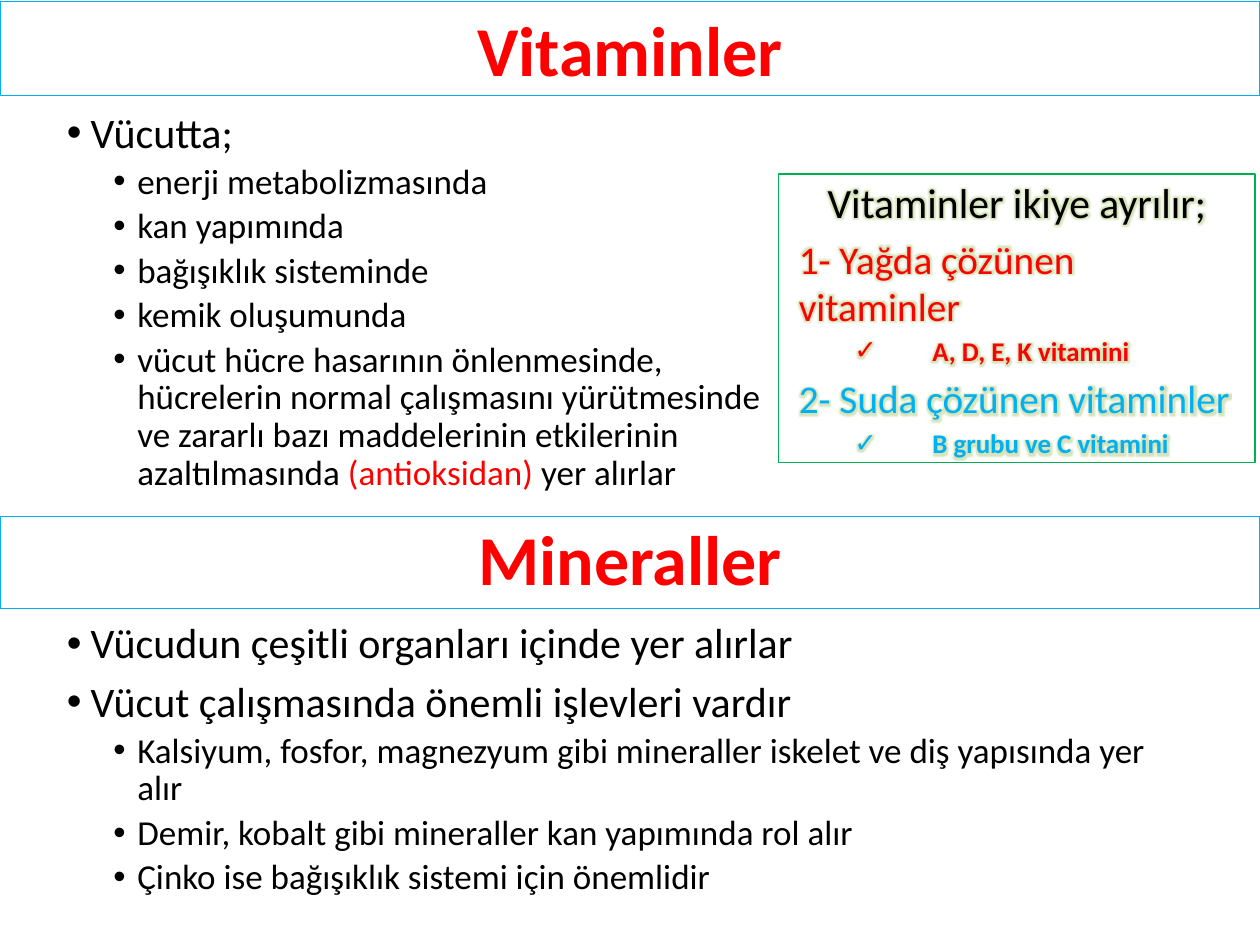
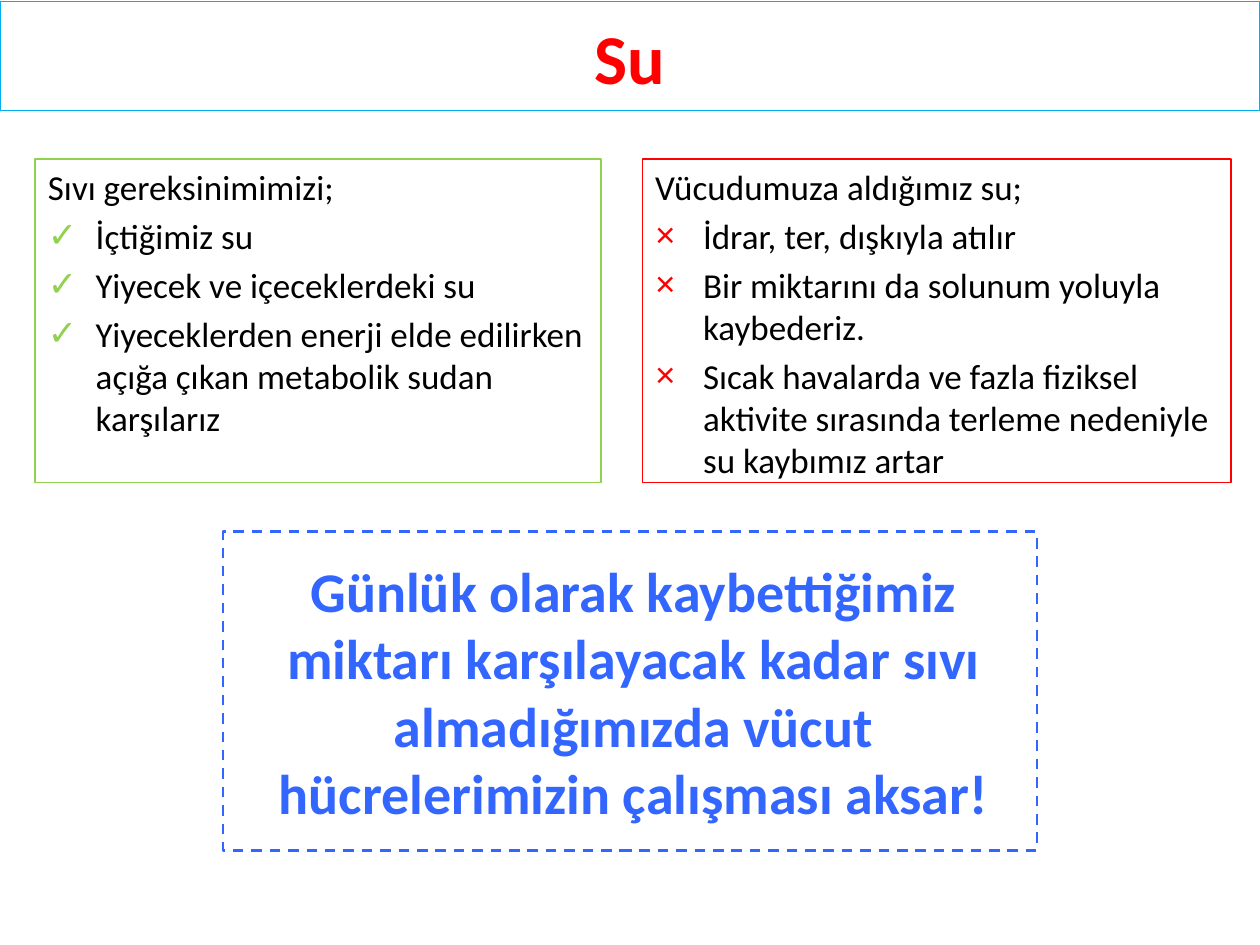
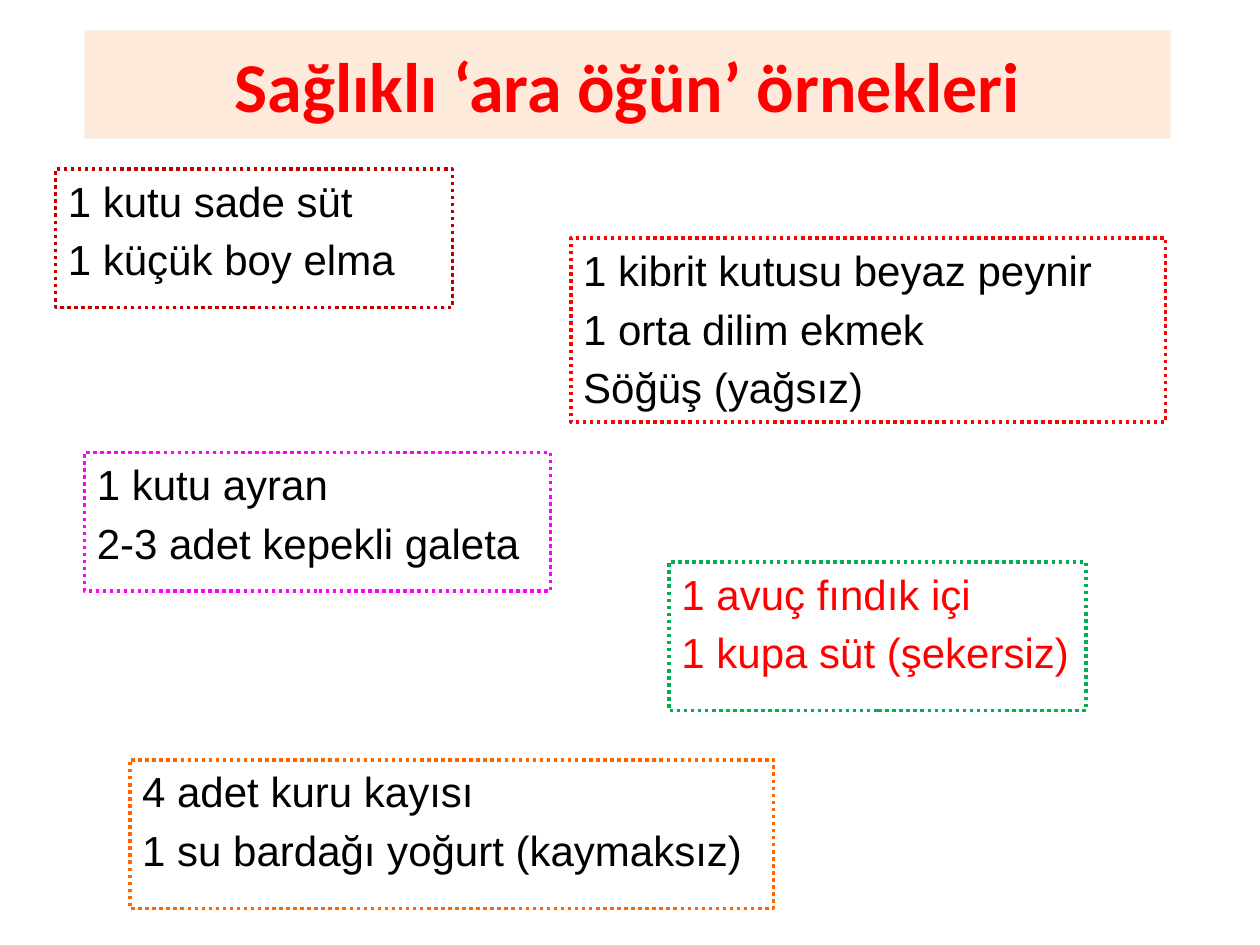
import dataclasses
import pptx
import pptx.dml.color
import pptx.enum.dml
import pptx.enum.shapes
import pptx.enum.text
import pptx.oxml
import pptx.oxml.ns
import pptx.util

ALIGN = pptx.enum.text.PP_ALIGN
ANCHOR = pptx.enum.text.MSO_ANCHOR
DASH = pptx.enum.dml.MSO_LINE
RECT = pptx.enum.shapes.MSO_SHAPE.RECTANGLE
NS = pptx.oxml.ns.nsdecls("a")


# Theme: colours, fonts and type sizes
class Theme:
    red, black, blue = "FF0000", "000000", "3366FF"
    sky, green, lime = "00B0F0", "00B050", "92D050"
    pink, orange, wine = "FF00FF", "FF6600", "C00000"
    peach, glow = "FDEADA", "9BBB59"
    font, plain = "Calibri", "Arial"
    head, call, large, mid = 40, 32, 24, 20


# Paragraph style; before is in points, or a percentage given as text
@dataclasses.dataclass
class Style:
    size: float
    color: str = Theme.black
    bold: bool = False
    font: str = Theme.font
    left: float = 0
    hang: float = 0
    level: int = 0
    line: float = 1
    before: object = "20%"
    mark: str = ""
    tint: str = ""
    center: bool = False
    glow: bool = False


HEAD = Style(Theme.head, Theme.red, True, before=0, center=True)
SUBHEAD = dataclasses.replace(HEAD, line=0.9)
CALL = Style(Theme.call, Theme.blue, True, left=0.06, center=True)
POINT = Style(Theme.large, left=0.19, hang=-0.19, line=0.9, before=7.5, mark="•")
SUB = dataclasses.replace(POINT, size=Theme.mid, left=0.56, level=1, before=3.8)
LEAD = Style(Theme.mid)
SNACK = Style(Theme.large, font=Theme.plain, left=0.38, hang=-0.38)

# Grid of the slide: 100 columns by 75 rows
COLS, ROWS = 100, 75


def place(deck, box):
    cell = deck.slide_width / COLS, deck.slide_height / ROWS
    return [round(n * cell[i % 2]) for i, n in enumerate(box)]


def rgb(code):
    return pptx.dml.color.RGBColor.from_string(code)


def node(text):
    return pptx.oxml.parse_xml(text)


def add_mark(props, style):
    if not style.mark:
        props.append(node(f"<a:buNone {NS}/>"))
        return
    if style.tint:
        props.append(node(f'<a:buClr {NS}><a:srgbClr val="{style.tint}"/></a:buClr>'))
    props.append(node(f'<a:buFont {NS} typeface="{Theme.plain}"/>'))
    props.append(node(f'<a:buChar {NS} char="{style.mark}"/>'))


def add_run(para, text, style, color):
    run = para.add_run()
    run.text = text
    font = run.font
    font.size, font.bold, font.name = pptx.util.Pt(style.size), style.bold, style.font
    font.color.rgb = rgb(color)
    if style.glow:
        fill = run._r.rPr.find(pptx.oxml.ns.qn("a:solidFill"))
        fill.addnext(node(
            f'<a:effectLst {NS}><a:glow rad="63500"><a:srgbClr val="{Theme.glow}">'
            f'<a:alpha val="40000"/></a:srgbClr></a:glow></a:effectLst>'))


def add_para(para, style, runs, first):
    para.level = style.level
    para.alignment = ALIGN.CENTER if style.center else ALIGN.LEFT
    para.line_spacing = style.line
    share = isinstance(style.before, str)
    para.space_before = pptx.util.Pt(0 if first or share else style.before)
    props = para._p.get_or_add_pPr()
    if share and not first:
        gap = props.find(pptx.oxml.ns.qn("a:spcBef"))
        gap.remove(gap[0])
        gap.append(node(f'<a:spcPct {NS} val="{int(style.before[:-1]) * 1000}"/>'))
    props.set("marL", str(pptx.util.Inches(style.left)))
    props.set("indent", str(pptx.util.Inches(style.hang)))
    add_mark(props, style)
    for run in runs:
        text, color = (run, style.color) if isinstance(run, str) else run
        add_run(para, text, style, color)


# One text region: lines are (style, run, run, ...)
def fill_box(deck, shape, box, lines, edge=None, fill=None, mid=False):
    shape.left, shape.top, shape.width, shape.height = place(deck, box)
    if fill:
        shape.fill.solid()
        shape.fill.fore_color.rgb = rgb(fill)
    else:
        shape.fill.background()
    if edge:
        color, width, *dash = edge
        shape.line.color.rgb = rgb(color)
        shape.line.width = pptx.util.Pt(width)
        if dash:
            shape.line.dash_style = dash[0]
    else:
        shape.line.fill.background()
    frame = shape.text_frame
    frame.word_wrap = True
    frame.auto_size = pptx.enum.text.MSO_AUTO_SIZE.NONE
    frame.vertical_anchor = ANCHOR.MIDDLE if mid else ANCHOR.TOP
    for i, (style, *runs) in enumerate(lines):
        para = frame.add_paragraph() if i else frame.paragraphs[0]
        add_para(para, style, runs, first=not i)


def add_box(deck, slide, box, lines, **look):
    shape = slide.shapes.add_shape(RECT, *place(deck, box))
    shape.shadow.inherit = False
    fill_box(deck, shape, box, lines, **look)


def add_band(deck, slide, text, high):
    fill_box(deck, slide.shapes.title, (0, 0.1, COLS, high), [(HEAD, text)],
             edge=(Theme.sky, 0.75), mid=True)


def new_slide(deck, name):
    return deck.slides.add_slide(deck.slide_layouts.get_by_name(name))


# Slide 1: vitamins above, minerals below
def add_kinds(deck, shape, box):
    top = Style(23.8, center=True, glow=True)
    kind = Style(22.4, Theme.red, left=0.06, glow=True)
    item = Style(15.4, Theme.red, True, left=1.12, hang=-0.62, level=1,
                 mark="✓", glow=True)
    water = {"color": Theme.sky}
    fill_box(deck, shape, box, [
        (top, "Vitaminler ikiye ayrılır;"),
        (kind, "1- Yağda çözünen vitaminler"),
        (item, "A, D, E, K vitamini"),
        (dataclasses.replace(kind, **water), "2- Suda çözünen vitaminler"),
        (dataclasses.replace(item, **water), "B grubu ve C vitamini"),
    ], edge=(Theme.green, 0.75), mid=True)


def vitamin_slide(deck):
    slide = new_slide(deck, "Comparison")
    _, kinds, uses, roles, spare = slide.placeholders
    spare._element.getparent().remove(spare._element)
    add_band(deck, slide, "Vitaminler", 7.5)
    fill_box(deck, uses, (4.3, 8.4, 57.5, 41.7), [
        (POINT, "Vücutta;"),
        (SUB, "enerji metabolizmasında"),
        (SUB, "kan yapımında"),
        (SUB, "bağışıklık sisteminde"),
        (SUB, "kemik oluşumunda"),
        (SUB, "vücut hücre hasarının önlenmesinde, hücrelerin normal çalışmasını "
              "yürütmesinde ve zararlı bazı maddelerinin etkilerinin azaltılmasında ",
         ("(antioksidan) ", Theme.red), "yer alırlar"),
    ])
    add_kinds(deck, kinds, (61.8, 13.8, 37.8, 22.9))
    add_box(deck, slide, (0, 41, COLS, 7.3), [(SUBHEAD, "Mineraller")],
            edge=(Theme.sky, 0.75), mid=True)
    fill_box(deck, roles, (4.3, 48.9, 91.5, 24.3), [
        (POINT, "Vücudun çeşitli organları içinde yer alırlar"),
        (POINT, "Vücut çalışmasında önemli işlevleri vardır"),
        (SUB, "Kalsiyum, fosfor, magnezyum gibi mineraller iskelet ve diş "
              "yapısında yer alır"),
        (SUB, "Demir, kobalt gibi mineraller kan yapımında rol alır"),
        (SUB, "Çinko ise bağışıklık sistemi için önemlidir"),
    ])


# Slide 2: water gained and water lost
def add_list(deck, shape, box, mark, tint, lead, items):
    style = dataclasses.replace(LEAD, left=0.38, hang=-0.38, mark=mark, tint=tint)
    fill_box(deck, shape, box, [(LEAD, lead)] + [(style, item) for item in items],
             edge=(tint, 1))


def water_slide(deck):
    slide = new_slide(deck, "Two Content")
    _, gain, loss = slide.placeholders
    add_band(deck, slide, "Su", 8.7)
    top, high = 12.6, 25.7
    add_list(deck, gain, (2.8, top, 44.9, high), "✓", Theme.lime,
             "Sıvı gereksinimimizi;",
             ["İçtiğimiz su", "Yiyecek ve içeceklerdeki su",
              "Yiyeceklerden enerji elde edilirken açığa çıkan metabolik sudan "
              "karşılarız"])
    add_list(deck, loss, (51, top, 46.7, high), "×", Theme.red,
             "Vücudumuza aldığımız su;",
             ["İdrar, ter, dışkıyla atılır",
              "Bir miktarını da solunum yoluyla kaybederiz.",
              "Sıcak havalarda ve fazla fiziksel aktivite sırasında terleme "
              "nedeniyle su kaybımız artar"])
    add_box(deck, slide, (17.7, 42.2, 64.6, 25.3), [
        (CALL, "Günlük olarak kaybettiğimiz miktarı karşılayacak kadar sıvı "
               "almadığımızda vücut hücrelerimizin çalışması aksar!"),
    ], edge=(Theme.blue, 1.5, DASH.DASH), mid=True)


# Slide 3: snack cards
SNACKS = [
    ((45.3, 18.9, 47.2, 14.6), Theme.red, Theme.black,
     ["1 kibrit kutusu beyaz peynir", "1 orta dilim ekmek", "Söğüş (yağsız)"]),
    ((6.7, 35.9, 37, 11), Theme.pink, Theme.black,
     ["1 kutu ayran", "2-3 adet kepekli galeta"]),
    ((53.1, 44.6, 33.1, 11.8), Theme.green, Theme.red,
     ["1 avuç fındık içi", "1 kupa süt (şekersiz)"]),
    ((10.3, 60.3, 51.1, 11.8), Theme.orange, Theme.black,
     ["4 adet kuru kayısı", "1 su bardağı yoğurt (kaymaksız)"]),
    ((4.4, 13.4, 31.5, 11), Theme.wine, Theme.black,
     ["1 kutu sade süt", "1 küçük boy elma"]),
]


def snack_slide(deck):
    slide = new_slide(deck, "Title Only")
    fill_box(deck, slide.shapes.title, (6.7, 2.4, 86.2, 8.6),
             [(HEAD, "Sağlıklı ‘ara öğün’ örnekleri")], fill=Theme.peach, mid=True)
    for box, edge, color, items in SNACKS:
        style = dataclasses.replace(SNACK, color=color)
        add_box(deck, slide, box, [(style, item) for item in items],
                edge=(edge, 2, DASH.ROUND_DOT))


def main():
    deck = pptx.Presentation()
    deck.slide_width = pptx.util.Inches(10)
    deck.slide_height = pptx.util.Inches(7.5)
    vitamin_slide(deck)
    water_slide(deck)
    snack_slide(deck)
    deck.save("out.pptx")


if __name__ == "__main__":
    main()
